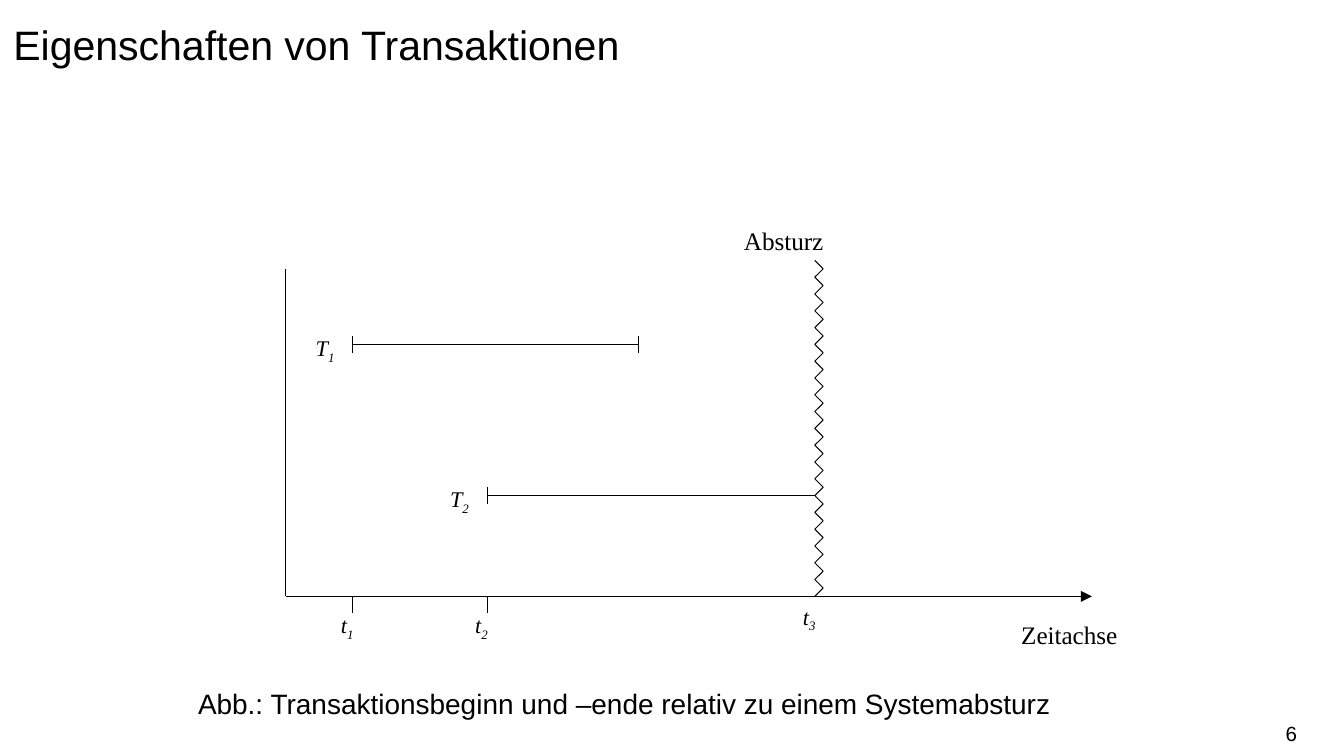
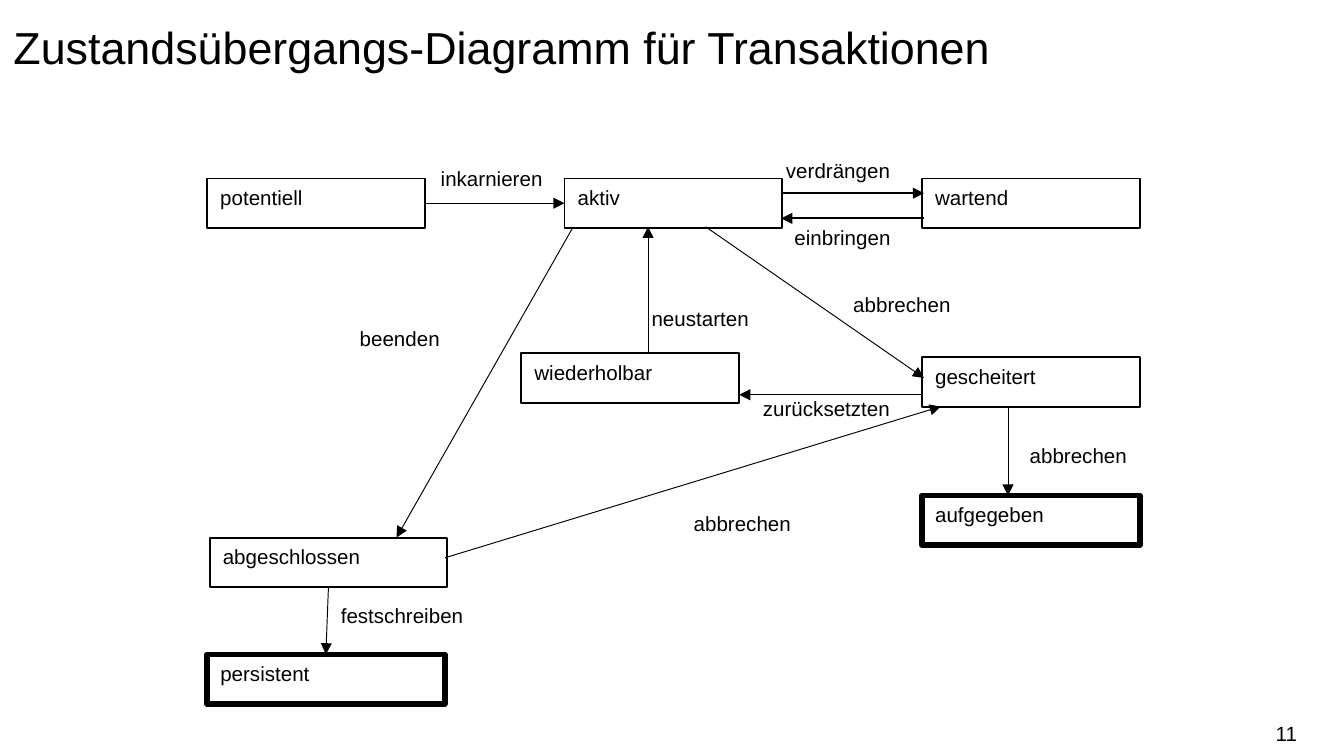
import pptx
import pptx.dml.color
import pptx.enum.shapes
import pptx.enum.text
import pptx.util
from lxml import etree
from pptx.oxml.ns import qn

COLUMNS, ROWS = 160, 90
TOP, LEFT, BOTTOM, RIGHT = range(4)
ANCHOR = pptx.enum.text.MSO_ANCHOR
ALIGN = pptx.enum.text.PP_ALIGN


def color(hex_code):
    return pptx.dml.color.RGBColor.from_string(hex_code)


class Deck:
    """Holds the shared style and the current slide; lengths are grid columns and rows."""
    INK = "000000"
    SANS, SERIF = "Arial", "Times New Roman"
    THIN, NORMAL, THICK = 0.5, 1, 3
    SMALL = 11

    def __init__(self):
        self.prs = pptx.Presentation()
        self.prs.slide_width = pptx.util.Inches(10)
        self.prs.slide_height = pptx.util.Inches(5.625)
        self.slide = None

    def x(self, columns):
        return round(self.prs.slide_width * columns / COLUMNS)

    def y(self, rows):
        return round(self.prs.slide_height * rows / ROWS)

    def area(self, left, top, width, height):
        return self.x(left), self.y(top), self.x(width), self.y(height)

    def add_run(self, paragraph, text, size, font=SANS, italic=False, subscript=False):
        run = paragraph.add_run()
        run.text = text
        run.font.size = pptx.util.Pt(size)
        run.font.name = font
        run.font.color.rgb = color(self.INK)
        if italic:
            run.font.italic = True
        if subscript:
            run.font._element.set("baseline", "-25000")

    def stroke(self, shape, weight):
        shape.line.color.rgb = color(self.INK)
        shape.line.width = pptx.util.Pt(weight)

    def new_slide(self, title, size, number):
        self.slide = self.prs.slides.add_slide(self.prs.slide_layouts[5])
        heading = self.slide.shapes.title
        heading.left, heading.top, heading.width, heading.height = self.area(0, 0, COLUMNS, 15)
        frame = heading.text_frame
        frame.auto_size = pptx.enum.text.MSO_AUTO_SIZE.NONE
        frame.vertical_anchor = ANCHOR.TOP
        paragraph = frame.paragraphs[0]
        paragraph.alignment = ALIGN.LEFT
        paragraph.line_spacing = 1.25
        self.add_run(paragraph, title, size)

        footer = self.text_box(118.6, 84.9, 35.8, 4.8)
        footer.margin_left = footer.margin_right = 0
        footer.vertical_anchor = ANCHOR.MIDDLE
        footer.paragraphs[0].alignment = ALIGN.RIGHT
        self.add_run(footer.paragraphs[0], str(number), self.SMALL)

    def text_box(self, left, top, width, height):
        frame = self.slide.shapes.add_textbox(*self.area(left, top, width, height)).text_frame
        frame.word_wrap = True
        return frame

    def label(self, text, left, top, width, height=4.8, size=SMALL, font=SANS):
        frame = self.text_box(left, top, width, height)
        self.add_run(frame.paragraphs[0], text, size, font)

    def symbol(self, letter, index, left, top):
        """Writes an italic variable with a subscript index."""
        paragraph = self.text_box(left, top, 7, 4.8).paragraphs[0]
        self.add_run(paragraph, letter, 12, self.SERIF, italic=True)
        self.add_run(paragraph, str(index), 12, self.SERIF, italic=True, subscript=True)

    def box(self, text, left, top, width, weight):
        shape = self.slide.shapes.add_shape(
            pptx.enum.shapes.MSO_SHAPE.RECTANGLE, *self.area(left, top, width, 5.9))
        shape.shadow.inherit = False
        shape.fill.background()
        self.stroke(shape, weight)
        frame = shape.text_frame
        frame.word_wrap = True
        frame.vertical_anchor = ANCHOR.TOP
        frame.paragraphs[0].alignment = ALIGN.LEFT
        self.add_run(frame.paragraphs[0], text, self.SMALL)
        return shape

    def line(self, start, end, weight=THIN, arrow=False):
        """Draws a line; each end is a (column, row) point or a (shape, side) joint."""
        points = [(0, 0) if hasattr(place[0], "shape_id") else place for place in (start, end)]
        (x1, y1), (x2, y2) = points
        connector = self.slide.shapes.add_connector(
            pptx.enum.shapes.MSO_CONNECTOR.STRAIGHT,
            self.x(x1), self.y(y1), self.x(x2), self.y(y2))
        for place, join in ((start, connector.begin_connect), (end, connector.end_connect)):
            if hasattr(place[0], "shape_id"):
                join(*place)
        self.stroke(connector, weight)
        if arrow:
            etree.SubElement(connector.line._get_or_add_ln(), qn("a:tailEnd"), type="triangle")
        etree.SubElement(connector._element.spPr, qn("a:effectLst"))

    def zigzag(self, left, right, top, bottom):
        points = [(right if step % 2 else left, top + step)
                  for step in range(bottom - top + 1)]
        for start, end in zip(points, points[1:]):
            self.line(start, end)


def build_crash_timeline(deck):
    deck.new_slide("Eigenschaften von Transaktionen", 22, 6)
    origin, axis, crash = 34, 71, 97
    deck.line((origin, 32), (origin, axis))
    deck.line((origin, axis), (130, axis), arrow=True)
    deck.label("Zeitachse", 120, 73, 15, 5.3, 13.5, deck.SERIF)
    deck.label("Absturz", 87, 26, 21, 5.3, 13.5, deck.SERIF)
    deck.zigzag(crash, crash + 1, 31, axis)

    transactions = [(42, 76, 41), (58, crash, 59)]
    for index, (begin, end, row) in enumerate(transactions, 1):
        deck.line((begin, row), (end, row))
        for stop in (begin, end):
            if stop != crash:
                deck.line((stop, row - 1), (stop, row + 1))
        deck.symbol("T", index, begin - 6, row - 2)
        deck.line((begin, axis), (begin, axis + 2))
        deck.symbol("t", index, begin - 3, axis + 1)
    deck.symbol("t", 3, crash - 3, axis)
    deck.label("Abb.: Transaktionsbeginn und –ende relativ zu einem Systemabsturz",
               22, 81, 115, 5.6, 15)


def build_state_diagram(deck):
    deck.new_slide("Zustandsübergangs-Diagramm für Transaktionen", 24, 11)
    first, second, third = (24.65 + 42.55 * column for column in range(3))
    narrow, wide = 25.95, 28.3
    states = {
        name: deck.box(name, left, top, width, weight)
        for name, left, top, width, weight in [
            ("potentiell", first, 21.25, narrow, deck.NORMAL),
            ("aktiv", second, 21.25, narrow, deck.NORMAL),
            ("wartend", third, 21.25, narrow, deck.NORMAL),
            ("gescheitert", third, 42.55, narrow, deck.NORMAL),
            ("aufgegeben", third, 59, narrow, deck.THICK),
            ("wiederholbar", 62.05, 42.05, narrow, deck.NORMAL),
            ("abgeschlossen", 24.95, 64, wide, deck.NORMAL),
            ("persistent", first, 77.9, wide, deck.THICK),
        ]
    }
    transitions = [
        ("einbringen", (93, 26, 16.5), (110, 26), (93, 26), deck.NORMAL),
        ("verdrängen", (92, 18, 18), (93, 23), (110, 23), deck.NORMAL),
        ("beenden", (41.25, 38, 16.5), (68.25, 27), (47.2, 64), deck.THIN),
        ("inkarnieren", (50.9, 19, 19),
         (states["potentiell"], RIGHT), (states["aktiv"], LEFT), deck.THIN),
        ("abbrechen", (100, 34, 16.5), (84, 27), (110, 45), deck.THIN),
        ("abbrechen", (121, 52, 16.5), (120, 48.4), (120, 59), deck.THIN),
        ("festschreiben", (39, 71, 20),
         (states["abgeschlossen"], BOTTOM), (states["persistent"], TOP), deck.THIN),
        ("neustarten", (76, 35.7, 21), (77.15, 42), (77.15, 27), deck.THIN),
        ("abbrechen", (81, 60, 16.5), (53, 66.4), (112, 48.4), deck.THIN),
        ("zurücksetzten", (89.25, 46.4, 22), (109.6, 47), (88, 47), deck.THIN),
    ]
    for name, place, start, end, weight in transitions:
        deck.line(start, end, weight, arrow=True)
        deck.label(name, *place)


def main():
    deck = Deck()
    build_crash_timeline(deck)
    build_state_diagram(deck)
    deck.prs.save("out.pptx")


if __name__ == "__main__":
    main()
